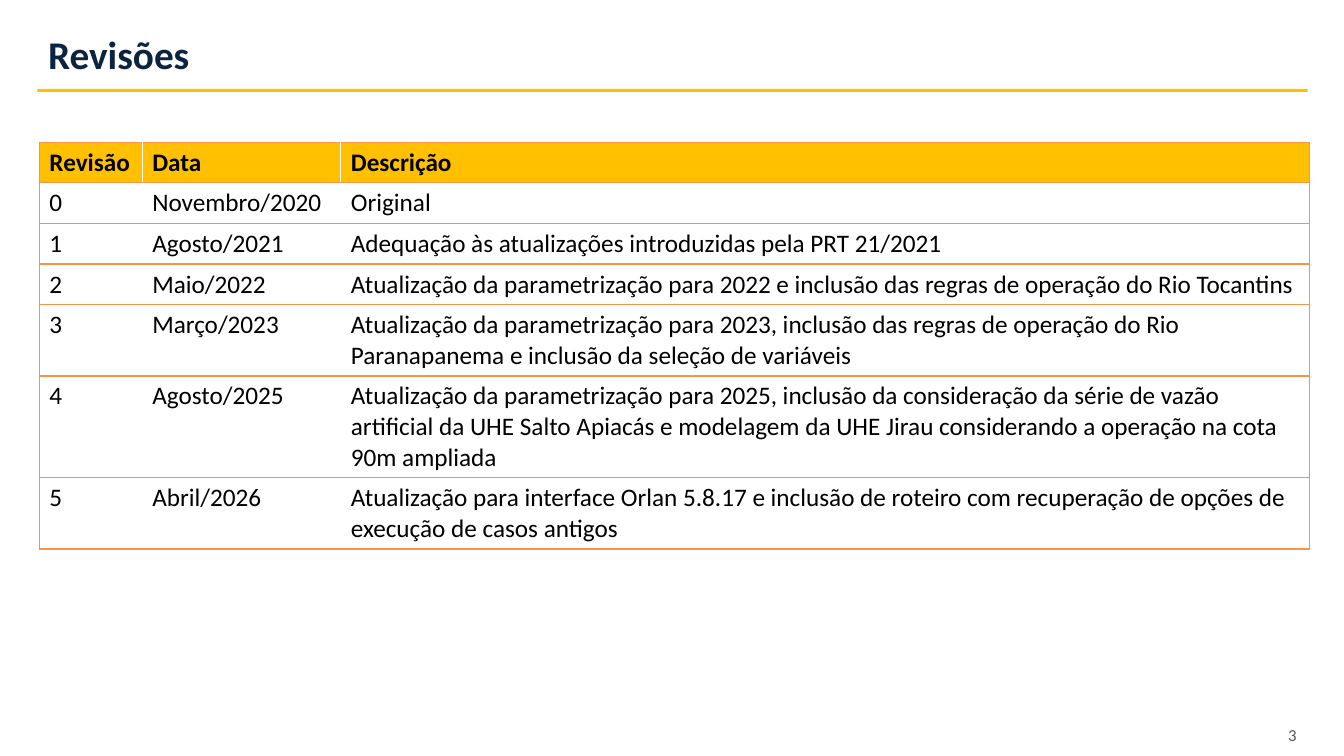
from typing import NamedTuple

from lxml.etree import SubElement
from pptx import Presentation
from pptx.dml.color import RGBColor
from pptx.enum.shapes import MSO_SHAPE
from pptx.enum.text import PP_ALIGN
from pptx.oxml.ns import qn
from pptx.util import Inches, Pt

GOLD = RGBColor(0xFF, 0xC0, 0x00)
ORANGE = RGBColor(0xF7, 0x96, 0x46)
NAVY = RGBColor(0x0C, 0x24, 0x40)
GRAY = RGBColor(0x59, 0x59, 0x59)
BLACK = RGBColor(0, 0, 0)
WHITE = RGBColor(0xFF, 0xFF, 0xFF)
FONT = "Calibri"

# Grid of 100 columns by 100 rows over the slide
WIDTH, HEIGHT = Inches(13.33), Inches(7.5)
COL, ROW = WIDTH / 100, HEIGHT / 100
TABLE_COLS = (7.65, 14.78, 72.09)
CELL_PADDING, LINE_ROWS = 1.33, 4.05


class Box(NamedTuple):
    x: float
    y: float
    w: float
    h: float

    def emu(self) -> tuple[int, ...]:
        return (round(self.x * COL), round(self.y * ROW),
                round(self.w * COL), round(self.h * ROW))


class Style(NamedTuple):
    size: int
    color: RGBColor
    bold: bool = False
    align: PP_ALIGN = PP_ALIGN.LEFT


class Label(NamedTuple):
    text: str
    box: Box
    style: Style


class Revision(NamedTuple):
    number: str
    date: str
    description: str
    lines: int = 1


LABELS = (
    Label("Revisões", Box(2.85, 3.33, 89.42, 7.6), Style(28, NAVY, True)),
    Label("3", Box(57.16, 95.2, 40.06, 4),
          Style(12, GRAY, align=PP_ALIGN.RIGHT)),
)
REVISIONS = (
    Revision("Revisão", "Data", "Descrição"),
    Revision("0", "Novembro/2020", "Original"),
    Revision("1", "Agosto/2021",
             "Adequação às atualizações introduzidas pela PRT 21/2021"),
    Revision("2", "Maio/2022",
             "Atualização da parametrização para 2022 e inclusão das regras "
             "de operação do Rio Tocantins"),
    Revision("3", "Março/2023",
             "Atualização da parametrização para 2023, inclusão das regras de "
             "operação do Rio Paranapanema e inclusão da seleção de variáveis",
             2),
    Revision("4", "Agosto/2025",
             "Atualização da parametrização para 2025, inclusão da "
             "consideração da série de vazão artificial da UHE Salto Apiacás "
             "e modelagem da UHE Jirau considerando a operação na cota 90m "
             "ampliada", 3),
    Revision("5", "Abril/2026",
             "Atualização para interface Orlan 5.8.17 e inclusão de roteiro "
             "com recuperação de opções de execução de casos antigos", 2),
)


def write(tf, text: str, style: Style) -> None:
    tf.text = text
    tf.word_wrap = True
    p = tf.paragraphs[0]
    p.alignment = style.align
    font = p.runs[0].font
    font.name, font.size, font.bold = FONT, Pt(style.size), style.bold
    font.color.rgb = style.color


def add_label(s, label: Label) -> None:
    write(s.shapes.add_textbox(*label.box.emu()).text_frame,
          label.text, label.style)


def add_rule(s, box: Box) -> None:
    sp = s.shapes.add_shape(MSO_SHAPE.RECTANGLE, *box.emu())
    sp.shadow.inherit = False
    sp.fill.solid()
    sp.fill.fore_color.rgb = GOLD
    sp.line.fill.background()


def add_borders(cell, sides: list[str]) -> None:
    tcPr = cell._tc.get_or_add_tcPr()
    for i, side in enumerate(sides):
        ln = SubElement(tcPr, qn(f"a:ln{side}"), w=str(Pt(1)))
        fill = SubElement(ln, qn("a:solidFill"))
        SubElement(fill, qn("a:srgbClr"), val=str(ORANGE))
        # Borders come before the cell fill
        tcPr.insert(i, ln)


def add_revisions(s, x: float, y: float) -> None:
    heights = [CELL_PADDING + LINE_ROWS * rev.lines for rev in REVISIONS]
    box = Box(x, y, sum(TABLE_COLS), sum(heights))
    table = s.shapes.add_table(len(REVISIONS), len(TABLE_COLS),
                               *box.emu()).table
    table.horz_banding = False
    for column, width in zip(table.columns, TABLE_COLS):
        column.width = round(width * COL)
    for i, (rev, height) in enumerate(zip(REVISIONS, heights)):
        table.rows[i].height = round(height * ROW)
        header = i == 0
        for j, text in enumerate((rev.number, rev.date, rev.description)):
            cell = table.cell(i, j)
            write(cell.text_frame, text, Style(18, BLACK, header))
            cell.fill.solid()
            cell.fill.fore_color.rgb = GOLD if header else WHITE
            left = ["L"] if j == 0 else []
            right = ["R"] if j == len(TABLE_COLS) - 1 else []
            add_borders(cell, left + right + ["T", "B"])


def main() -> None:
    prs = Presentation()
    prs.slide_width, prs.slide_height = WIDTH, HEIGHT
    s = prs.slides.add_slide(prs.slide_layouts[6])

    # Title rule, title and page number
    add_rule(s, Box(2.78, 11.75, 94.52, 0.4))
    for label in LABELS:
        add_label(s, label)

    # Revision history
    add_revisions(s, 2.93, 18.8)

    prs.save("out.pptx")


if __name__ == "__main__":
    main()
